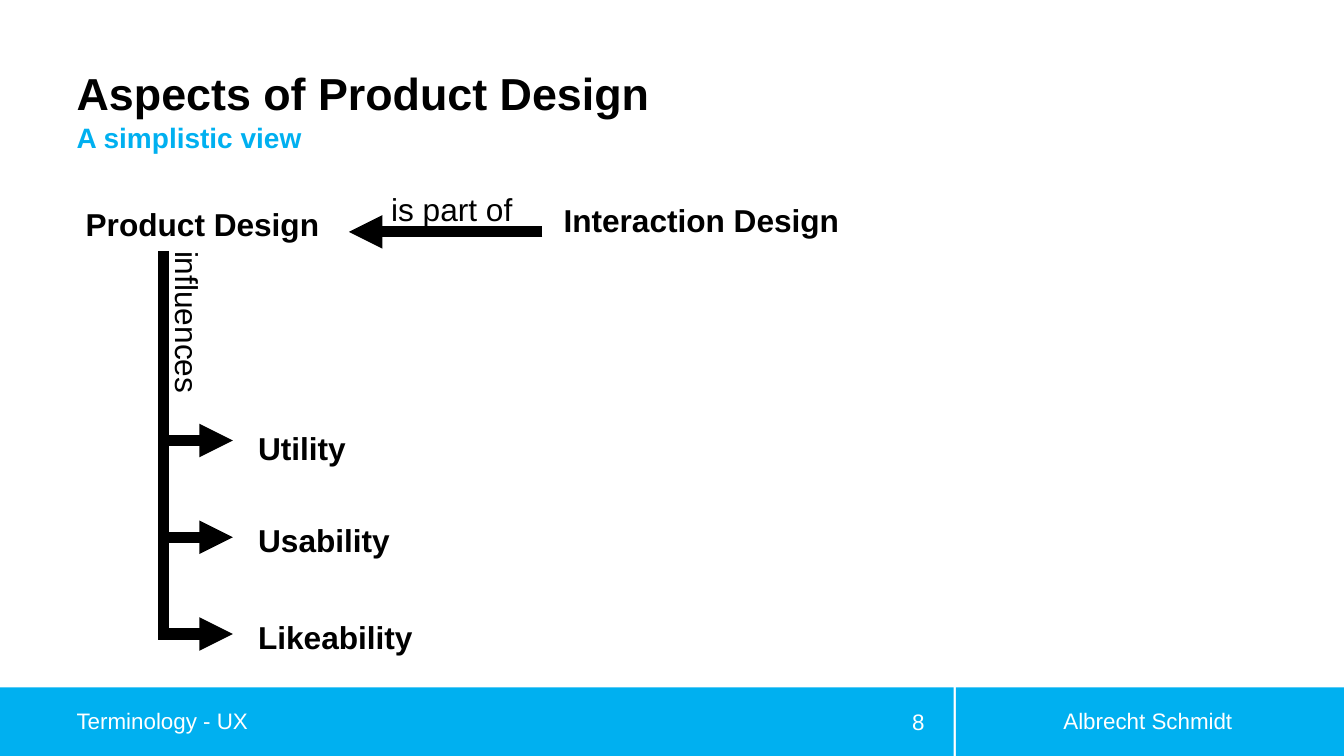
from lxml.etree import SubElement
from pptx import Presentation
from pptx.dml.color import RGBColor
from pptx.enum.shapes import MSO_CONNECTOR, MSO_SHAPE
from pptx.enum.text import MSO_ANCHOR as ANCHOR, MSO_AUTO_SIZE as AUTO_SIZE, PP_ALIGN as ALIGN
from pptx.oxml.ns import qn
from pptx.util import Inches, Pt

BLACK = RGBColor(0x00, 0x00, 0x00)
WHITE = RGBColor(0xFF, 0xFF, 0xFF)
BLUE = RGBColor(0x00, 0xB0, 0xF0)

LABEL = {"size": Pt(22.6), "bold": False}
CONCEPT = {"size": Pt(22.6), "bold": True}
FOOTER = {"size": Pt(16), "bold": False}


def write(box, place, text, style, color=BLACK, align=ALIGN.LEFT,
          anchor=ANCHOR.TOP, insets=(0.09, 0.05, 0.09, 0.05), wrap=True):
    box.left, box.top, box.width, box.height = map(Inches, place)
    frame = box.text_frame
    sides = dict(zip(("margin_left", "margin_top", "margin_right", "margin_bottom"),
                     map(Inches, insets)))
    layout = {"word_wrap": wrap, "auto_size": AUTO_SIZE.NONE,
              "vertical_anchor": anchor, **sides}
    for name, value in layout.items():
        setattr(frame, name, value)
    para = frame.paragraphs[0]
    para.alignment = align
    span = para.add_run()
    span.text = text
    for name, value in {"name": "Arial", **style}.items():
        setattr(span.font, name, value)
    span.font.color.rgb = color
    return para


def draw_line(x1, y1, x2, y2, arrow=True):
    line = page.shapes.add_connector(MSO_CONNECTOR.STRAIGHT, *map(Inches, (x1, y1, x2, y2)))
    line.line.width = Pt(8)
    line.line.color.rgb = BLACK
    if arrow:
        SubElement(line.line._get_or_add_ln(), qn("a:tailEnd"), type="triangle")
    SubElement(line._element.spPr, qn("a:effectLst"))


deck = Presentation()
deck.slide_width = Inches(13.33)
deck.slide_height = Inches(7.5)
page = deck.slides.add_slide(deck.slide_layouts[1])

for left, width in ((9.48, 3.85), (0, 9.46)):
    band = page.shapes.add_shape(MSO_SHAPE.RECTANGLE, Inches(left), Inches(6.82),
                                 Inches(width), Inches(0.68))
    band.shadow.inherit = False
    band.fill.solid()
    band.fill.fore_color.rgb = BLUE
    band.line.fill.background()

title = write(page.shapes.title, (0.76, 0.13, 8.7, 1.06), "Aspects of Product Design",
              {"size": Pt(32), "bold": True}, anchor=ANCHOR.BOTTOM, insets=(0, 0, 0, 0))
title.line_spacing = 0.9

subtitle = write(page.placeholders[1], (0.76, 1.19, 8.7, 0.55), "A simplistic view",
                 {"size": Pt(20), "bold": True}, BLUE, insets=(0, 0.04, 0, 0))
for name, value in {"line_spacing": 0.9, "space_before": Pt(5), "space_after": Pt(6)}.items():
    setattr(subtitle, name, value)
bullet = subtitle._p.get_or_add_pPr()
bullet.set("marL", "0")
bullet.set("indent", "0")
SubElement(bullet, qn("a:buNone"))

footers = (
    ("Terminology - UX", (0.76, 6.95, 6.14, 0.4), ALIGN.LEFT, 0),
    ("Albrecht Schmidt", (9.61, 6.95, 3.55, 0.4), ALIGN.CENTER, 0.1),
    ("8", (8.41, 6.96, 0.86, 0.4), ALIGN.RIGHT, 0.1),
)
for text, place, align, inset in footers:
    box = page.shapes.add_textbox(0, 0, 0, 0)
    write(box, place, text, FOOTER, WHITE, align, ANCHOR.MIDDLE, (inset, 0, inset, 0))

draw_line(5.38, 2.3, 3.46, 2.3)
draw_line(1.62, 2.49, 1.62, 6.29, arrow=False)
for start, height in ((1.62, 4.37), (1.62, 5.33), (1.57, 6.29)):
    draw_line(start, height, 2.31, height)

labels = (
    ("Product Design", (0.76, 1.98, 2.58, 0.47), CONCEPT, True, 0),
    ("Interaction Design", (5.5, 1.94, 2.94, 0.47), CONCEPT, False, 0),
    ("is part of", (3.79, 1.83, 1.6, 0.47), LABEL, True, 0),
    ("influences", (1.06, 2.97, 1.61, 0.47), LABEL, False, 90),
    ("Utility", (2.47, 4.21, 1.92, 0.47), CONCEPT, True, 0),
    ("Usability", (2.47, 5.12, 1.92, 0.47), CONCEPT, True, 0),
    ("Likeability", (2.47, 6.08, 1.92, 0.47), CONCEPT, True, 0),
)
for text, place, style, wrap, rotation in labels:
    box = page.shapes.add_textbox(0, 0, 0, 0)
    write(box, place, text, style, wrap=wrap)
    box.rotation = rotation

deck.save("out.pptx")
